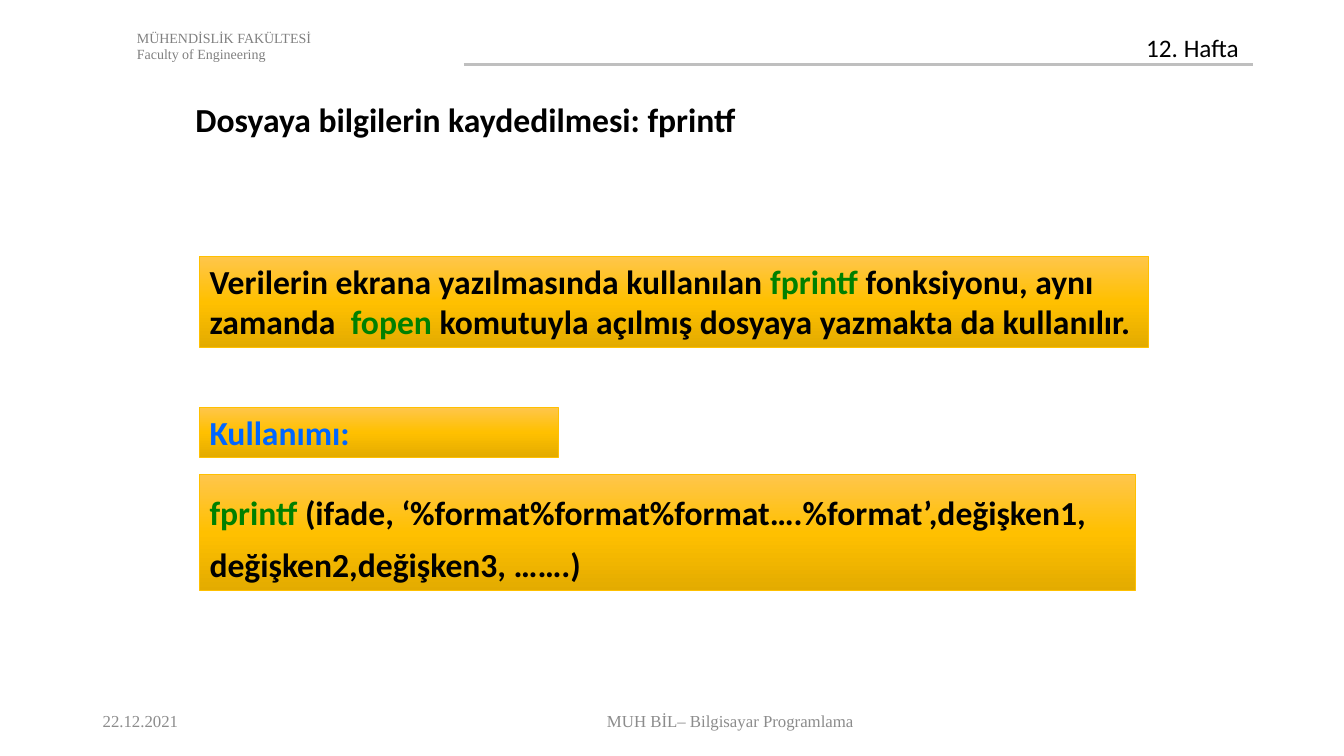
from copy import deepcopy

from lxml import etree
from pptx import Presentation
from pptx.dml.color import RGBColor
from pptx.enum.shapes import MSO_CONNECTOR, MSO_SHAPE
from pptx.enum.text import MSO_ANCHOR, PP_ALIGN
from pptx.oxml.ns import qn
from pptx.util import Inches, Pt

LEFT, CENTER = PP_ALIGN.LEFT, PP_ALIGN.CENTER
TOP, MIDDLE = MSO_ANCHOR.TOP, MSO_ANCHOR.MIDDLE
RECTANGLE = MSO_SHAPE.RECTANGLE
STRAIGHT = MSO_CONNECTOR.STRAIGHT

BLACK, GREEN, BLUE = "000000", "008000", "0066FF"
HEADER_GRAY, FOOTER_GRAY, RULE_GRAY = "808080", "8C8C8C", "BFBFBF"
GOLD = "FFC000"
GOLD_STOPS = [(0, "FFC64B"), (0.5, GOLD), (1, "E3AB00")]
SANS, SERIF = "Calibri", "Times New Roman"


def color(hex_value):
    return RGBColor.from_string(hex_value)


def write(frame, paragraphs, size, font=SANS, bold=False, align=LEFT,
          anchor=TOP, line_spacing=None):
    frame.word_wrap = True
    frame.vertical_anchor = anchor
    for index, runs in enumerate(paragraphs):
        paragraph = frame.paragraphs[0] if index == 0 else frame.add_paragraph()
        paragraph.alignment = align
        if line_spacing:
            paragraph.line_spacing = line_spacing
        paragraph.font.size = Pt(size)
        paragraph.font.name = font
        paragraph.font.bold = bold
        for text, hex_value in runs:
            run = paragraph.add_run()
            run.text = text
            run.font.color.rgb = color(hex_value)


def add_label(slide, box, paragraphs, size, **style):
    label = slide.shapes.add_textbox(*map(Inches, box))
    write(label.text_frame, paragraphs, size, **style)


def fill_gold(panel):
    panel.fill.gradient()
    panel.fill.gradient_angle = 270
    stop_list = panel._element.spPr.find(qn("a:gradFill")).find(qn("a:gsLst"))
    stop_list.insert(1, deepcopy(stop_list[0]))
    for stop, (position, hex_value) in zip(panel.fill.gradient_stops, GOLD_STOPS):
        stop.position = position
        stop.color.rgb = color(hex_value)


def add_panel(slide, box, runs, line_spacing=None):
    panel = slide.shapes.add_shape(RECTANGLE, *map(Inches, box))
    panel.shadow.inherit = False
    fill_gold(panel)
    panel.line.color.rgb = color(GOLD)
    panel.line.width = Pt(0.5)
    write(panel.text_frame, [runs], 24, bold=True, line_spacing=line_spacing)


def add_header(slide, left, top, width):
    right = left + width
    rule_y = top + 0.4
    rule = slide.shapes.add_connector(
        STRAIGHT, Inches(left + 3.34), Inches(rule_y), Inches(right), Inches(rule_y))
    rule.line.color.rgb = color(RULE_GRAY)
    rule.line.width = Pt(1.5)
    etree.SubElement(rule._element.spPr, qn("a:effectLst"))
    add_label(slide, (left, top, 6.67, 0.44),
              [[("MÜHENDİSLİK FAKÜLTESİ", HEADER_GRAY)],
               [("Faculty of Engineering", HEADER_GRAY)]], 10, font=SERIF)
    add_label(slide, (right - 1.16, top + 0.03, 1.15, 0.4),
              [[("12. Hafta", BLACK)]], 18)


def add_content(slide, left, top):
    add_label(slide, (left - 0.14, top, 7.49, 0.5),
              [[("Dosyaya bilgilerin kaydedilmesi: fprintf", BLACK)]], 24, bold=True)
    add_panel(slide, (left, top + 1.61, 9.41, 0.91), [
        ("Verilerin ekrana yazılmasında kullanılan ", BLACK),
        ("fprintf", GREEN),
        (" fonksiyonu, aynı zamanda  ", BLACK),
        ("fopen", GREEN),
        (" komutuyla açılmış dosyaya yazmakta da kullanılır.", BLACK)])
    add_panel(slide, (left, top + 3.11, 3.56, 0.5), [("Kullanımı:", BLUE)])
    add_panel(slide, (left, top + 3.78, 9.28, 1.15), [
        ("fprintf ", GREEN),
        ("(ifade, ‘%format%format%format….%format’,değişken1, "
         "değişken2,değişken3, …….)", BLACK)], line_spacing=1.3)


def add_footer(slide, left, top, height):
    add_label(slide, (left, top, 1.57, height), [[("22.12.2021", FOOTER_GRAY)]],
              12, font=SERIF, anchor=MIDDLE)
    add_label(slide, (left + 1.81, top, 9.03, height),
              [[("MUH BİL– Bilgisayar Programlama", FOOTER_GRAY)]],
              12, font=SERIF, align=CENTER, anchor=MIDDLE)


def main():
    deck = Presentation()
    deck.slide_width, deck.slide_height = Inches(13.33), Inches(7.5)
    slide = deck.slides.add_slide(deck.slide_layouts[6])
    add_header(slide, 1.26, 0.24, 11.17)
    add_content(slide, 1.98, 0.93)
    add_footer(slide, 0.92, 6.95, 0.4)
    deck.save("out.pptx")


if __name__ == "__main__":
    main()
